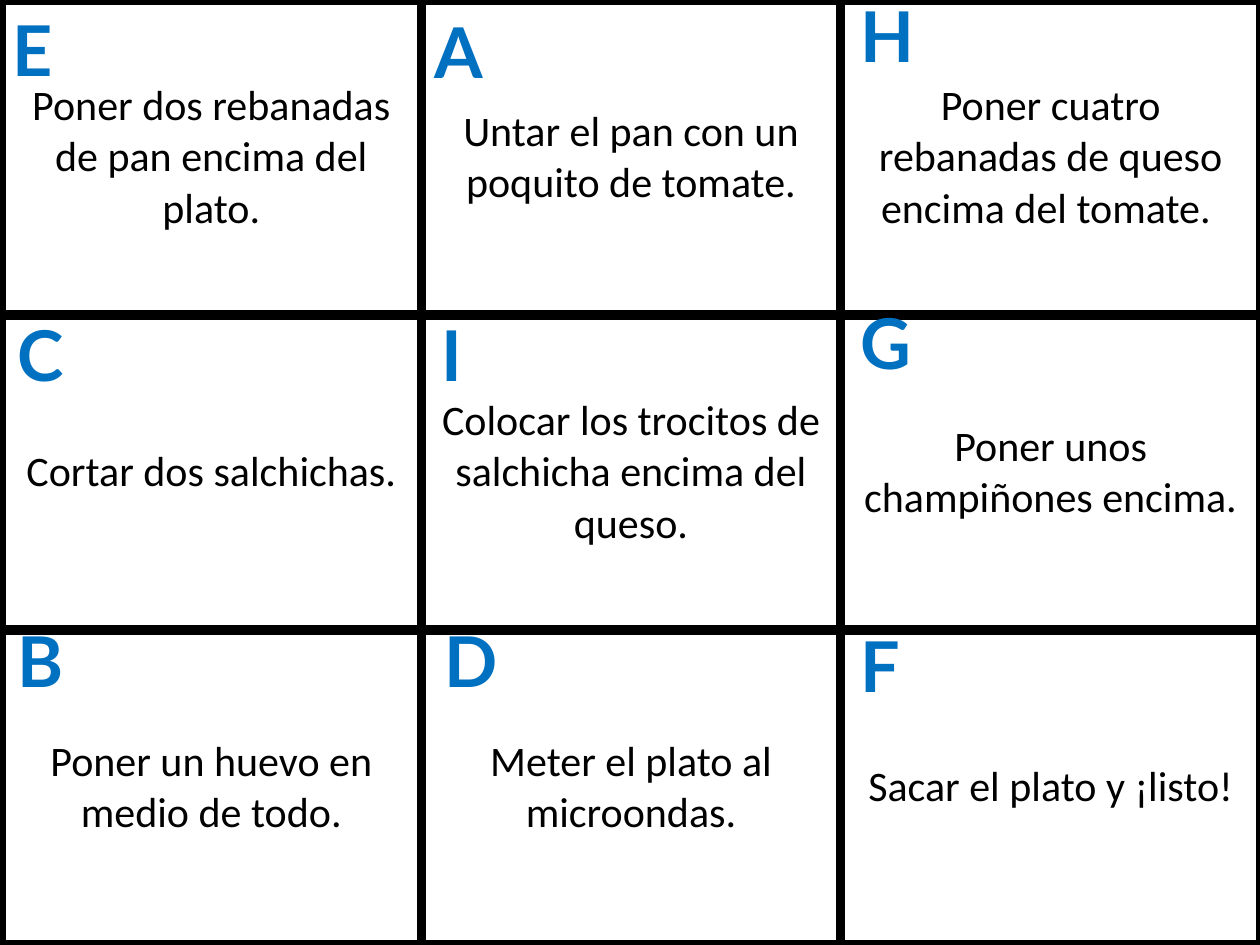
from lxml import etree
from pptx import Presentation
from pptx.dml.color import RGBColor
from pptx.enum import text
from pptx.oxml import ns
from pptx.util import Cm, Pt

BLACK = RGBColor(0x00, 0x00, 0x00)
WHITE = RGBColor(0xFF, 0xFF, 0xFF)
BLUE = RGBColor(0x00, 0x70, 0xC0)

STEPS = [
    ["Poner dos rebanadas de pan encima del plato.",
     "Untar el pan con un poquito de tomate.",
     "Poner cuatro rebanadas de queso encima del tomate. "],
    ["Cortar dos salchichas.",
     "Colocar los trocitos de salchicha encima del queso.",
     "Poner unos champiñones encima."],
    ["Poner un huevo en medio de todo.",
     "Meter el plato al microondas.",
     "Sacar el plato y ¡listo!"],
]
# Letter, left and top in cm
LETTERS = [
    ("A", 8.51, 0.05), ("B", 0.1, 12.32), ("C", 0.1, 6.15),
    ("D", 8.71, 12.32), ("E", 0, 0), ("F", 17.09, 12.42),
    ("G", 17.09, 5.92), ("H", 17.09, -0.28), ("I", 8.51, 6.15),
]
COLUMN_WIDTH, ROW_HEIGHT = Cm(8.46), Cm(6.35)
LETTER_WIDTH, LETTER_HEIGHT = Cm(1.19), Cm(1.96)
BORDER = Pt(6)


def add_borders(cell):
    """Draw all four cell borders; they must precede the cell's fill in the XML."""
    properties = cell._tc.get_or_add_tcPr()
    for position, side in enumerate(("a:lnL", "a:lnR", "a:lnT", "a:lnB")):
        line = etree.Element(ns.qn(side), w=str(BORDER))
        fill = etree.SubElement(line, ns.qn("a:solidFill"))
        etree.SubElement(fill, ns.qn("a:srgbClr"), val=str(BLACK))
        properties.insert(position, line)


def write(frame, words, font_name, size, color, bold):
    frame.word_wrap = True
    paragraph = frame.paragraphs[0]
    paragraph.text = words
    paragraph.alignment = text.PP_ALIGN.CENTER
    font = paragraph.font
    font.name, font.size, font.bold = font_name, Pt(size), bold
    font.color.rgb = color


def add_steps_table(slide):
    rows, columns = len(STEPS), len(STEPS[0])
    table = slide.shapes.add_table(
        rows, columns, Cm(0.03), 0, COLUMN_WIDTH * columns, ROW_HEIGHT * rows).table
    table.first_row = table.horz_banding = False
    for column in table.columns:
        column.width = COLUMN_WIDTH
    for row, steps in zip(table.rows, STEPS):
        row.height = ROW_HEIGHT
        for cell, step in zip(row.cells, steps):
            cell.fill.solid()
            cell.fill.fore_color.rgb = WHITE
            cell.vertical_anchor = text.MSO_ANCHOR.MIDDLE
            add_borders(cell)
            write(cell.text_frame, step, "Calibri", 24, BLACK, False)


def add_letters(slide):
    for letter, left, top in LETTERS:
        box = slide.shapes.add_textbox(Cm(left), Cm(top), LETTER_WIDTH, LETTER_HEIGHT)
        write(box.text_frame, letter, "Lato", 40, BLUE, True)
        box.text_frame.auto_size = text.MSO_AUTO_SIZE.SHAPE_TO_FIT_TEXT


def main():
    presentation = Presentation()
    presentation.slide_width, presentation.slide_height = Cm(25.4), Cm(19.05)
    slide = presentation.slides.add_slide(presentation.slide_layouts[6])
    add_steps_table(slide)
    add_letters(slide)
    presentation.save("out.pptx")


if __name__ == "__main__":
    main()
